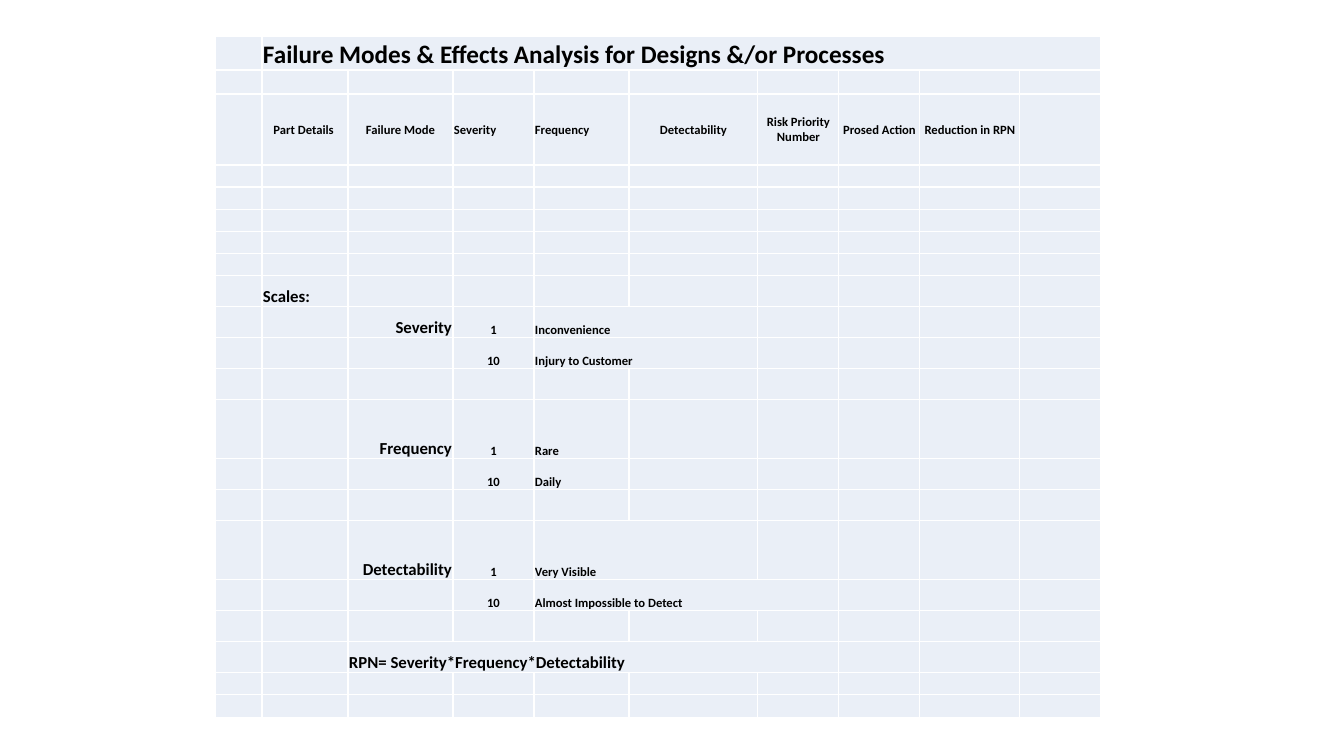
from lxml import etree
from pptx import Presentation
from pptx import util as u
from pptx.dml import color
from pptx.enum import text
from pptx.oxml import ns

PX = 914400 / 100.8  # EMU per px
FONT = "Calibri"
CELL_FILL, INK = "EAEFF7", "000000"
TITLE_PT, SCALE_PT, BODY_PT = 18, 12, 9

LEFT, CENTER, RIGHT = text.PP_ALIGN.LEFT, text.PP_ALIGN.CENTER, text.PP_ALIGN.RIGHT
BOTTOM, MIDDLE = text.MSO_ANCHOR.BOTTOM, text.MSO_ANCHOR.MIDDLE

COLUMN_WIDTHS = [47, 86, 105, 81, 95, 129, 81, 81, 100, 81]
ROW_HEIGHTS = [34, 24, 71, 22, 23, 22, 22, 22, 31, 31, 31,
               31, 59, 31, 31, 59, 31, 31, 31, 22, 23]

HEADINGS = [
    ("Part Details ", CENTER), ("Failure Mode", CENTER), ("Severity", LEFT),
    ("Frequency", LEFT), ("Detectability", CENTER), ("Risk Priority Number", CENTER),
    ("Prosed Action", CENTER), ("Reduction in RPN", CENTER),
]
# First row, scale name, then (score, meaning, columns spanned)
SCALES = [
    (9, "Severity", [("1", "Inconvenience", 2), ("10", "Injury to Customer", 2)]),
    (12, "Frequency", [("1", "Rare", 1), ("10", "Daily", 1)]),
    (15, "Detectability", [("1", "Very Visible", 2), ("10", "Almost Impossible to Detect", 3)]),
]


def px(length):
    return u.Emu(round(length * PX))


def rgb(hex_code):
    return color.RGBColor.from_string(hex_code)


def prepare_cell(cell):
    cell.fill.solid()
    cell.fill.fore_color.rgb = rgb(CELL_FILL)
    cell.margin_left = cell.margin_right = cell.margin_top = px(1)
    cell.margin_bottom = 0
    # Small end mark, so that empty rows keep their height
    end_mark = etree.SubElement(cell.text_frame.paragraphs[0]._p, ns.qn("a:endParaRPr"))
    end_mark.set("sz", str(BODY_PT * 100))


def write(grid, row, column, words, size=BODY_PT, align=LEFT, anchor=BOTTOM, span=1):
    cell = grid.cell(row, column)
    if span > 1:
        cell.merge(grid.cell(row, column + span - 1))
    cell.vertical_anchor = anchor
    paragraph = cell.text_frame.paragraphs[0]
    paragraph.alignment = align
    run = paragraph.add_run()
    run.text = words
    run.font.name = FONT
    run.font.size = u.Pt(size)
    run.font.bold = True
    run.font.color.rgb = rgb(INK)


def add_grid(slide, left, top):
    frame = slide.shapes.add_table(
        len(ROW_HEIGHTS), len(COLUMN_WIDTHS), px(left), px(top),
        px(sum(COLUMN_WIDTHS)), px(sum(ROW_HEIGHTS)))
    grid = frame.table
    grid.first_row = grid.horz_banding = False
    for column, width in zip(grid.columns, COLUMN_WIDTHS):
        column.width = px(width)
    for row, height in zip(grid.rows, ROW_HEIGHTS):
        row.height = px(height)
    for cell in grid.iter_cells():
        prepare_cell(cell)
    return grid


def fill_headings(grid):
    write(grid, 0, 1, "Failure Modes & Effects Analysis for Designs &/or Processes",
          TITLE_PT, span=9)
    for column, (heading, align) in enumerate(HEADINGS, start=1):
        write(grid, 2, column, heading, align=align, anchor=MIDDLE)


def fill_scales(grid):
    write(grid, 8, 1, "Scales:", SCALE_PT)
    for first_row, scale, levels in SCALES:
        write(grid, first_row, 2, scale, SCALE_PT, RIGHT)
        for row, (score, meaning, span) in enumerate(levels, start=first_row):
            write(grid, row, 3, score, align=CENTER)
            write(grid, row, 4, meaning, span=span)
    write(grid, 18, 2, "RPN= Severity*Frequency*Detectability", SCALE_PT, span=5)


def main():
    deck = Presentation()
    deck.slide_width, deck.slide_height = px(1344), px(756)
    slide = deck.slides.add_slide(deck.slide_layouts[6])

    # Analysis sheet: headings above, scoring scales below
    grid = add_grid(slide, 215, 36)
    fill_headings(grid)
    fill_scales(grid)

    deck.save("out.pptx")


if __name__ == "__main__":
    main()
